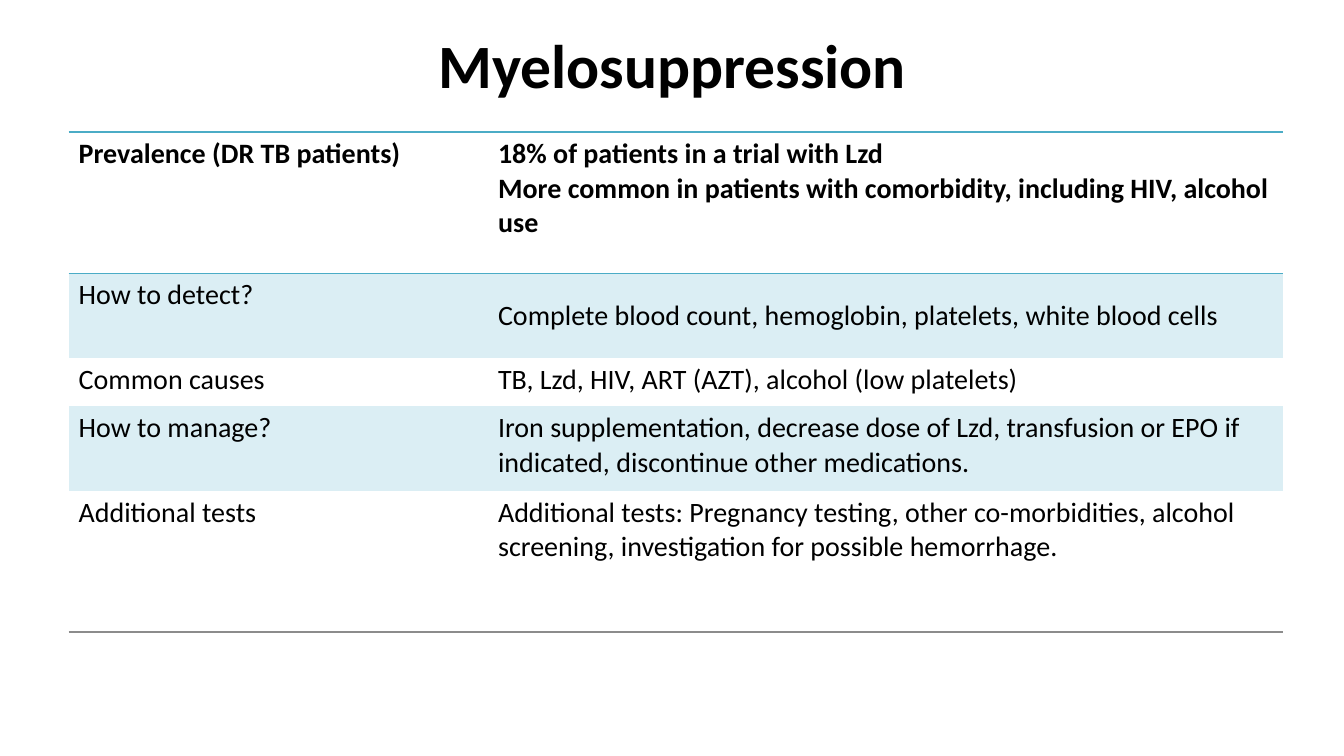
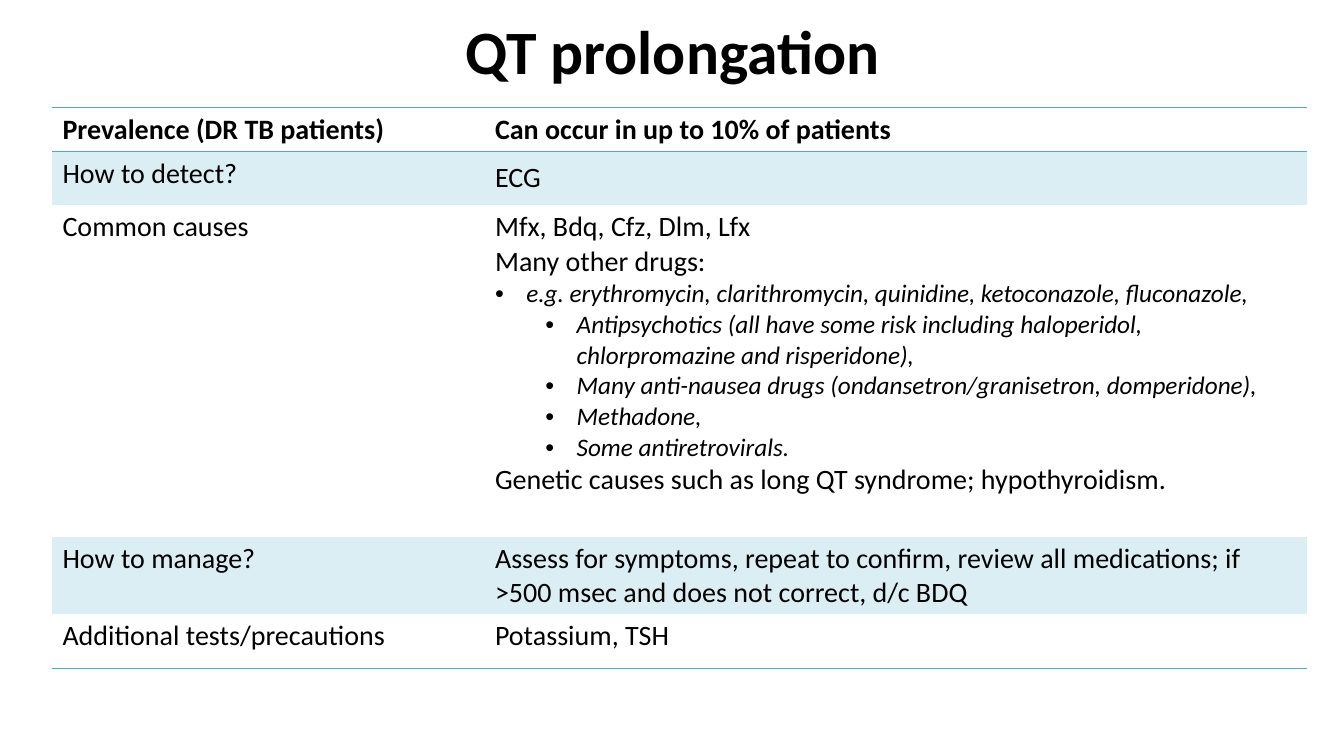
from dataclasses import dataclass

from lxml.etree import SubElement
from pptx import Presentation
from pptx.dml.color import RGBColor
from pptx.enum.text import MSO_ANCHOR, PP_ALIGN
from pptx.oxml.ns import qn
from pptx.util import Inches, Pt


@dataclass(frozen=True)
class Theme:
    font: str = "Calibri"
    ink: str = "000000"
    accent: str = "4BACC6"
    band: str = "DBEEF4"
    grey: str = "8C8C8C"
    title_size: int = 44
    body_size: int = 20
    bullet_size: int = 18
    rule_width: float = 1
    bullet_hang: float = 0.31
    bullet_step: float = 0.5
    plain_table: str = "{2D5ABB26-0587-4C30-8999-92F81FD0307C}"


@dataclass(frozen=True)
class Box:
    left: float
    top: float
    width: float
    height: float

    def lengths(self):
        return [Inches(v) for v in (self.left, self.top, self.width, self.height)]


@dataclass(frozen=True)
class Bullet:
    text: str
    level: int = 0


THEME = Theme()


def add_span(para, text, size, bold=False, italic=False):
    span = para.add_run()
    span.text = text
    span.font.name = THEME.font
    span.font.size = Pt(size)
    span.font.bold = bold
    span.font.italic = italic
    span.font.color.rgb = RGBColor.from_string(THEME.ink)


def set_bullet(para, level):
    para.level = level
    properties = para._p.get_or_add_pPr()
    indent = THEME.bullet_hang + level * THEME.bullet_step
    properties.set("marL", str(Inches(indent)))
    properties.set("indent", str(-Inches(THEME.bullet_hang)))
    SubElement(properties, qn("a:buFont"), typeface="Arial")
    SubElement(properties, qn("a:buChar"), char="•")


def fill_text(frame, items, bold):
    for index, item in enumerate(items):
        para = frame.paragraphs[0] if index == 0 else frame.add_paragraph()
        if isinstance(item, Bullet):
            set_bullet(para, item.level)
            add_span(para, item.text, THEME.bullet_size, italic=True)
        else:
            add_span(para, item, THEME.body_size, bold=bold)


def add_rule(cell, side, color):
    line = SubElement(cell._tc.get_or_add_tcPr(), qn(f"a:ln{side}"),
                      w=str(Pt(THEME.rule_width)))
    solid = SubElement(line, qn("a:solidFill"))
    SubElement(solid, qn("a:srgbClr"), val=color)


def style_cell(cell, row, last_row, end_color):
    if row == 0:
        add_rule(cell, "T", THEME.accent)
        add_rule(cell, "B", THEME.accent)
    elif row == last_row:
        add_rule(cell, "B", end_color)
    if row % 2:
        cell.fill.solid()
        cell.fill.fore_color.rgb = RGBColor.from_string(THEME.band)
    else:
        cell.fill.background()


def add_title(page, box, text):
    frame = page.shapes.add_textbox(*box.lengths()).text_frame
    frame.word_wrap = True
    frame.vertical_anchor = MSO_ANCHOR.TOP
    para = frame.paragraphs[0]
    para.alignment = PP_ALIGN.CENTER
    add_span(para, text, THEME.title_size, bold=True)


def add_fact_table(page, box, label_width, heights, facts, end_color):
    table = page.shapes.add_table(len(facts), 2, *box.lengths()).table
    table.first_row = False
    table.horz_banding = False
    table._tbl.tblPr.find(qn("a:tableStyleId")).text = THEME.plain_table
    for column, width in zip(table.columns, (label_width, box.width - label_width)):
        column.width = Inches(width)
    for row, (height, (label, details)) in enumerate(zip(heights, facts)):
        table.rows[row].height = Inches(height)
        for column, items in enumerate(([label], details)):
            cell = table.cell(row, column)
            style_cell(cell, row, len(facts) - 1, end_color)
            fill_text(cell.text_frame, items, bold=row == 0)
    table.cell(1, 1).vertical_anchor = MSO_ANCHOR.MIDDLE


def add_fact_page(deck, title, title_box, table_box, label_width, heights, facts,
                  end_color=THEME.accent):
    page = deck.slides.add_slide(deck.slide_layouts[6])
    add_title(page, title_box, title)
    add_fact_table(page, table_box, label_width, heights, facts, end_color)


MYELOSUPPRESSION = [
    ("Prevalence (DR TB patients)", [
        "18% of patients in a trial with Lzd",
        "More common in patients with comorbidity, including HIV, alcohol use",
    ]),
    ("How to detect?", [
        "Complete blood count, hemoglobin, platelets, white blood cells",
    ]),
    ("Common causes", ["TB, Lzd, HIV, ART (AZT), alcohol (low platelets)"]),
    ("How to manage?", [
        "Iron supplementation, decrease dose of Lzd, transfusion or EPO if "
        "indicated, discontinue other medications.",
    ]),
    ("Additional tests", [
        "Additional tests: Pregnancy testing, other co-morbidities, alcohol "
        "screening, investigation for possible hemorrhage.",
    ]),
]

QT_PROLONGATION = [
    ("Prevalence (DR TB patients)", ["Can occur in up to 10% of patients"]),
    ("How to detect?", ["ECG"]),
    ("Common causes", [
        "Mfx, Bdq, Cfz, Dlm, Lfx",
        "Many other drugs:",
        Bullet("e.g. erythromycin, clarithromycin, quinidine, ketoconazole, "
               "fluconazole,"),
        Bullet("Antipsychotics (all have some risk including haloperidol, "
               "chlorpromazine and risperidone),", 1),
        Bullet("Many anti-nausea drugs (ondansetron/granisetron, domperidone),", 1),
        Bullet("Methadone,", 1),
        Bullet("Some antiretrovirals.", 1),
        "Genetic causes such as long QT syndrome; hypothyroidism.",
    ]),
    ("How to manage?", [
        "Assess for symptoms, repeat to confirm, review all medications; if "
        ">500 msec and does not correct, d/c BDQ",
    ]),
    ("Additional tests/precautions", ["Potassium, TSH"]),
]


def main():
    deck = Presentation()
    deck.slide_width = Inches(13.33)
    deck.slide_height = Inches(7.5)
    add_fact_page(deck, "Myelosuppression",
                  Box(1.67, 0.22, 10, 1.01), Box(0.68, 1.31, 12.05, 4.96),
                  4.16, (1.4, 0.84, 0.48, 0.84, 1.4), MYELOSUPPRESSION, THEME.grey)
    add_fact_page(deck, "QT prolongation",
                  Box(1.67, 0.08, 10, 1.25), Box(0.52, 1.07, 12.44, 5.56),
                  4.29, (0.43, 0.53, 3.29, 0.77, 0.54), QT_PROLONGATION)
    deck.save("out.pptx")


if __name__ == "__main__":
    main()
